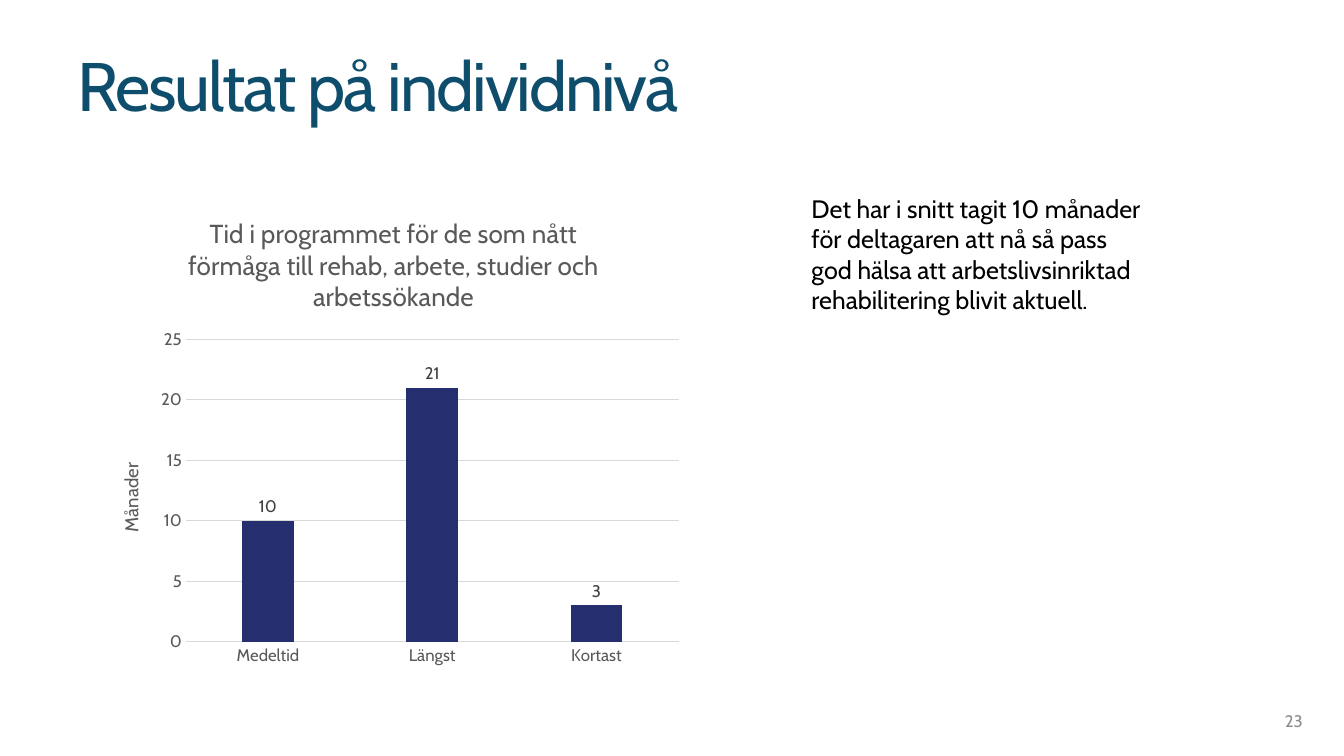
from lxml import etree
from pptx import Presentation
from pptx.chart.data import CategoryChartData
from pptx.dml.color import RGBColor
from pptx.enum.chart import XL_CHART_TYPE, XL_LABEL_POSITION, XL_TICK_MARK
from pptx.enum.text import MSO_ANCHOR, PP_ALIGN
from pptx.oxml import parse_xml
from pptx.oxml.ns import nsdecls
from pptx.util import Inches, Pt

COLUMN = XL_CHART_TYPE.COLUMN_CLUSTERED
OUTSIDE = XL_LABEL_POSITION.OUTSIDE_END
NO_TICK = XL_TICK_MARK.NONE
TOP, MIDDLE, BOTTOM = MSO_ANCHOR.TOP, MSO_ANCHOR.MIDDLE, MSO_ANCHOR.BOTTOM
LEFT, RIGHT = PP_ALIGN.LEFT, PP_ALIGN.RIGHT

FONT = "Cabin"
HUES = {"title": "0E4E6C", "page": "8C8C8C", "body": "000000", "bar": "252E6F",
        "axis": "595959", "label": "404040", "grid": "D9D9D9"}
# Plot area as shares of the chart box
PLOT = {"x": 0.15, "y": 0.3, "w": 0.83, "h": 0.63}


def style(font, size, hue):
    form = {"name": FONT, "size": Pt(size), "bold": False}
    for key, val in form.items():
        setattr(font, key, val)
    font.color.rgb = RGBColor.from_string(HUES[hue])


def rule(line):
    line.width = Pt(0.75)
    line.color.rgb = RGBColor.from_string(HUES["grid"])


def add_text(slide, box, text, size, hue, anchor=TOP, align=LEFT):
    frame = slide.shapes.add_textbox(*map(Inches, box)).text_frame
    frame.word_wrap = True
    frame.vertical_anchor = anchor
    para = frame.paragraphs[0]
    para.alignment = align
    run = para.add_run()
    run.text = text
    style(run.font, size, hue)
    return para


def add_head(slide, box, text):
    para = add_text(slide, box, text, 49, "title", BOTTOM)
    para.line_spacing = 0.9
    para.runs[0].font._element.set("spc", "-150")


def add_page(slide, box, text):
    para = add_text(slide, box, text, 12, "page", MIDDLE, RIGHT)
    para.space_after = Pt(6)


def set_title(frame, text, size):
    frame.text = text
    style(frame.paragraphs[0].runs[0].font, size, "axis")


def fix_plot(chart):
    area = chart._chartSpace.chart.plotArea
    for old in area.findall("{*}layout"):
        area.remove(old)
    layout = parse_xml(f"<c:layout {nsdecls('c')}><c:manualLayout/></c:layout>")
    vals = {"layoutTarget": "inner", "xMode": "edge", "yMode": "edge", **PLOT}
    space = layout.nsmap["c"]
    for tag, val in vals.items():
        etree.SubElement(layout[0], f"{{{space}}}{tag}").set("val", str(val))
    area.insert(0, layout)


def add_bars(slide, box):
    data = CategoryChartData()
    data.categories = ["Medeltid", "Längst", "Kortast"]
    data.add_series("Series 1", (10, 21, 3))
    chart = slide.shapes.add_chart(COLUMN, *map(Inches, box), data).chart
    chart.has_legend = False
    style(chart.font, 10, "body")
    set_title(chart.chart_title.text_frame,
              "Tid i programmet för de som nått förmåga till rehab, "
              "arbete, studier och arbetssökande", 18.6)
    chart.chart_title.include_in_layout = False

    # Axes
    cats, vals = chart.category_axis, chart.value_axis
    for axis in (cats, vals):
        axis.major_tick_mark = axis.minor_tick_mark = NO_TICK
        style(axis.tick_labels.font, 12, "axis")
    rule(cats.format.line)
    vals.format.line.fill.background()
    rule(vals.major_gridlines.format.line)
    for key, val in {"minimum_scale": 0, "maximum_scale": 25, "major_unit": 5}.items():
        setattr(vals, key, val)
    side = vals.axis_title.text_frame
    set_title(side, "Månader", 13.3)
    side._txBody.bodyPr.set("rot", "-5400000")

    # Bars and their values
    plot = chart.plots[0]
    for key, val in {"gap_width": 219, "overlap": -27, "vary_by_categories": False}.items():
        setattr(plot, key, val)
    fill = plot.series[0].format.fill
    fill.solid()
    fill.fore_color.rgb = RGBColor.from_string(HUES["bar"])
    labels = plot.series[0].data_labels
    labels.show_value = True
    labels.position = OUTSIDE
    style(labels.font, 12, "label")
    fix_plot(chart)


def main():
    deck = Presentation()
    deck.slide_width, deck.slide_height = Inches(13.33), Inches(7.5)
    slide = deck.slides.add_slide(deck.slide_layouts[6])
    add_head(slide, (0.67, 0.34, 10.25, 0.96), "Resultat på individnivå")
    add_page(slide, (10.02, 6.95, 3, 0.4), "23")
    add_bars(slide, (0.96, 1.94, 5.89, 4.76))
    add_text(slide, (7.95, 1.87, 3.53, 1.31),
             "Det har i snitt tagit 10 månader för deltagaren att nå så pass "
             "god hälsa att arbetslivsinriktad rehabilitering blivit aktuell.",
             18, "body")
    deck.save("out.pptx")


if __name__ == "__main__":
    main()
